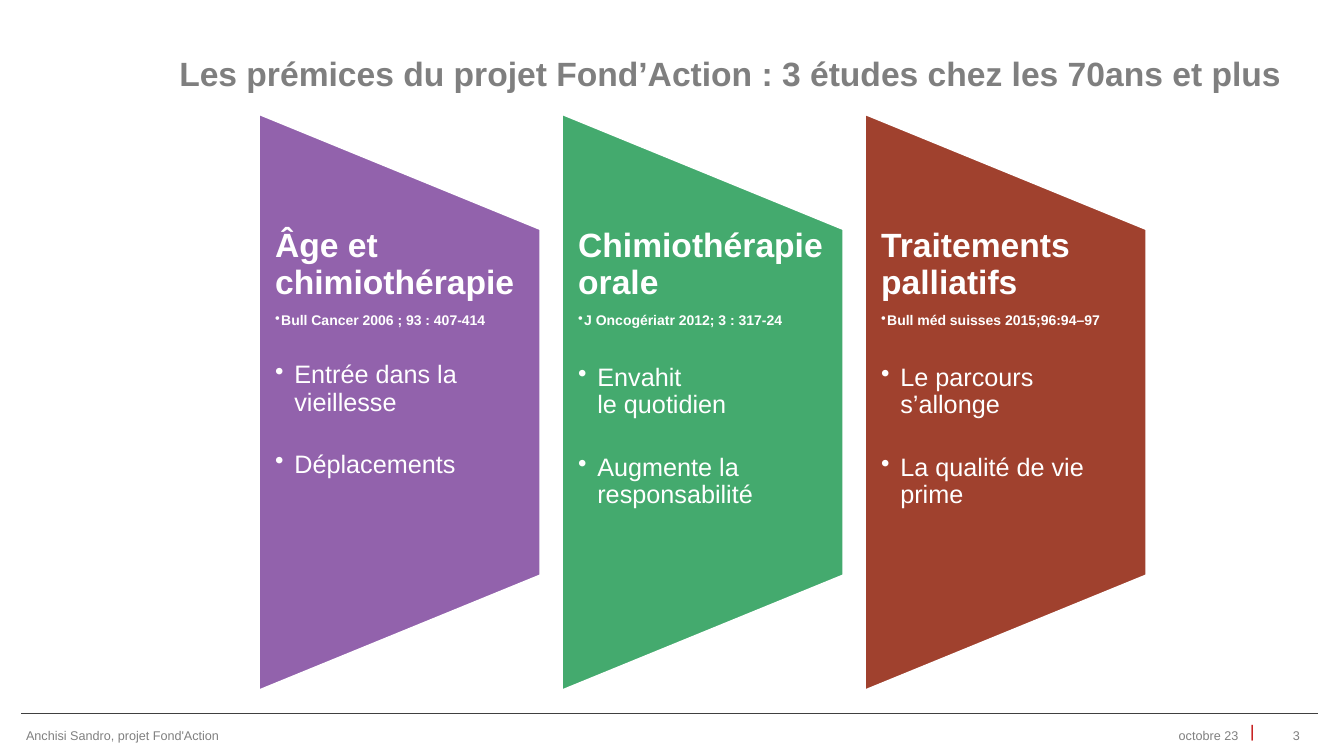
from pptx import Presentation
from pptx.dml.color import RGBColor
from pptx.enum.shapes import MSO_CONNECTOR as Link, MSO_SHAPE as Shape
from pptx.enum.text import MSO_ANCHOR as Anchor, PP_ALIGN as Align
from pptx.oxml.ns import qn
from pptx.util import Inches, Pt
from lxml.etree import SubElement

FONT = "Arial"
WHITE = "FFFFFF"
GREY = "808080"
STUDIES = [
    ("9262AC", "Âge et chimiothérapie", "Bull Cancer 2006 ; 93 : 407-414", 24,
     ["Entrée dans la vieillesse", "Déplacements"]),
    ("44AA6E", "Chimiothérapie orale", "J Oncogériatr 2012; 3 : 317-24", 26,
     ["Envahit\nle quotidien", "Augmente la responsabilité"]),
    ("A0412E", "Traitements palliatifs", "Bull méd suisses 2015;96:94–97", 26,
     ["Le parcours s’allonge", "La qualité de vie prime"]),
]


def rgb(code):
    """Turn a hex string into a colour."""
    return RGBColor.from_string(code)


def add_box(slide, left, top, width, height, anchor=Anchor.TOP):
    """Add a wrapping text box and return its text frame."""
    box = slide.shapes.add_textbox(
        Inches(left), Inches(top), Inches(width), Inches(height))
    frame = box.text_frame
    frame.word_wrap = True
    frame.vertical_anchor = anchor
    return frame


def add_text(para, text, size, color, bold=False):
    """Add runs to a paragraph, with a line break at each newline."""
    for row, part in enumerate(text.split("\n")):
        if row:
            para.add_line_break()
        run = para.add_run()
        run.text = part
        font = run.font
        font.name, font.size, font.bold = FONT, Pt(size), bold
        font.color.rgb = rgb(color)


def add_label(slide, area, text, size, color, bold=False,
              align=Align.LEFT, anchor=Anchor.MIDDLE):
    """Add a text box that holds a single line."""
    para = add_box(slide, *area, anchor).paragraphs[0]
    para.alignment = align
    add_text(para, text, size, color, bold)


def add_bullet(frame, text, size, indent, gap, bold=False):
    """Add a bulleted paragraph with a gap above it."""
    para = frame.add_paragraph()
    props = para._p.get_or_add_pPr()
    props.set("marL", str(Inches(indent)))
    props.set("indent", str(-Inches(indent)))
    SubElement(props, qn("a:buChar"), char="•")
    para.line_spacing = 0.9
    para.space_before = Pt(gap)
    add_text(para, text, size, WHITE, bold)


def add_panel(slide, left, color):
    """Add a trapezoid with its wide side on the left."""
    panel = slide.shapes.add_shape(
        Shape.FLOWCHART_MANUAL_OPERATION,
        Inches(left), Inches(2.59), Inches(5.73), Inches(2.8))
    panel.rotation = 270
    panel.shadow.inherit = False
    panel.fill.solid()
    panel.fill.fore_color.rgb = rgb(color)
    panel.line.color.rgb = rgb(WHITE)
    panel.line.width = Pt(2)


def add_study(slide, left, color, head, source, gap, points):
    """Add a panel with the heading, source and findings of a study."""
    add_panel(slide, left, color)
    frame = add_box(slide, left + 1.46, 2.27, 2.8, 3.44)
    frame.margin_left = frame.margin_right = Inches(0.17)
    frame.margin_top = frame.margin_bottom = 0
    para = frame.paragraphs[0]
    para.line_spacing = 0.9
    add_text(para, head, 24, WHITE, True)
    add_bullet(frame, source, 10, 0.06, 8.5, True)
    for point in points:
        add_bullet(frame, point, 18, 0.19, gap)
        gap = 25


def add_rule(slide):
    """Add the thin line above the footer."""
    rule = slide.shapes.add_connector(
        Link.STRAIGHT, Inches(0.21), Inches(7.08), Inches(13.07), Inches(7.08))
    rule.line.color.rgb = rgb("404040")
    rule.line.width = Pt(0.75)
    SubElement(rule._element.spPr, qn("a:effectLst"))


def add_footer(slide):
    """Add the rule, author, date, divider and page number."""
    add_rule(slide)
    add_label(slide, (12.3, 7.1, 0.36, 0.3), "|", 12, "C00000",
              anchor=Anchor.TOP)
    add_label(slide, (12.29, 7.18, 0.7, 0.24), "3", 9, GREY,
              align=Align.RIGHT)
    add_label(slide, (9.91, 7.18, 2.47, 0.24), "octobre 23", 9, GREY,
              align=Align.RIGHT)
    add_label(slide, (0.16, 7.18, 7.35, 0.24),
              "Anchisi Sandro, projet Fond'Action", 9, GREY)


def main():
    """Build the slide and save it."""
    deck = Presentation()
    deck.slide_width, deck.slide_height = Inches(13.33), Inches(7.5)
    slide = deck.slides.add_slide(deck.slide_layouts[6])
    add_label(slide, (1.68, 0.16, 11.33, 0.81),
              "Les prémices du projet Fond’Action : 3 études chez les 70ans et plus",
              24, "7F7F7F", True, anchor=Anchor.BOTTOM)
    for col, study in enumerate(STUDIES):
        add_study(slide, 1.1 + 3.005 * col, *study)
    add_footer(slide)
    deck.save("out.pptx")


if __name__ == "__main__":
    main()
